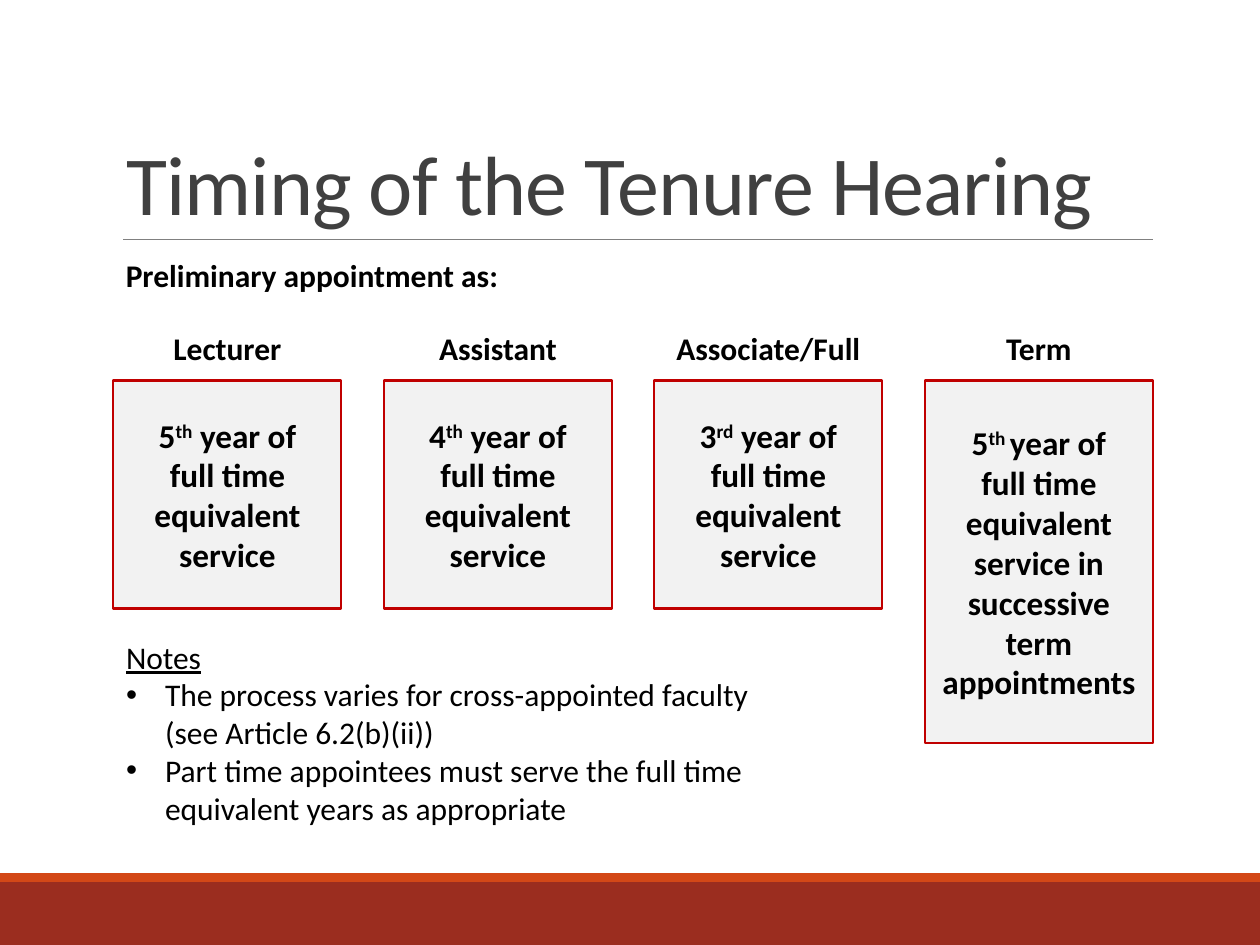
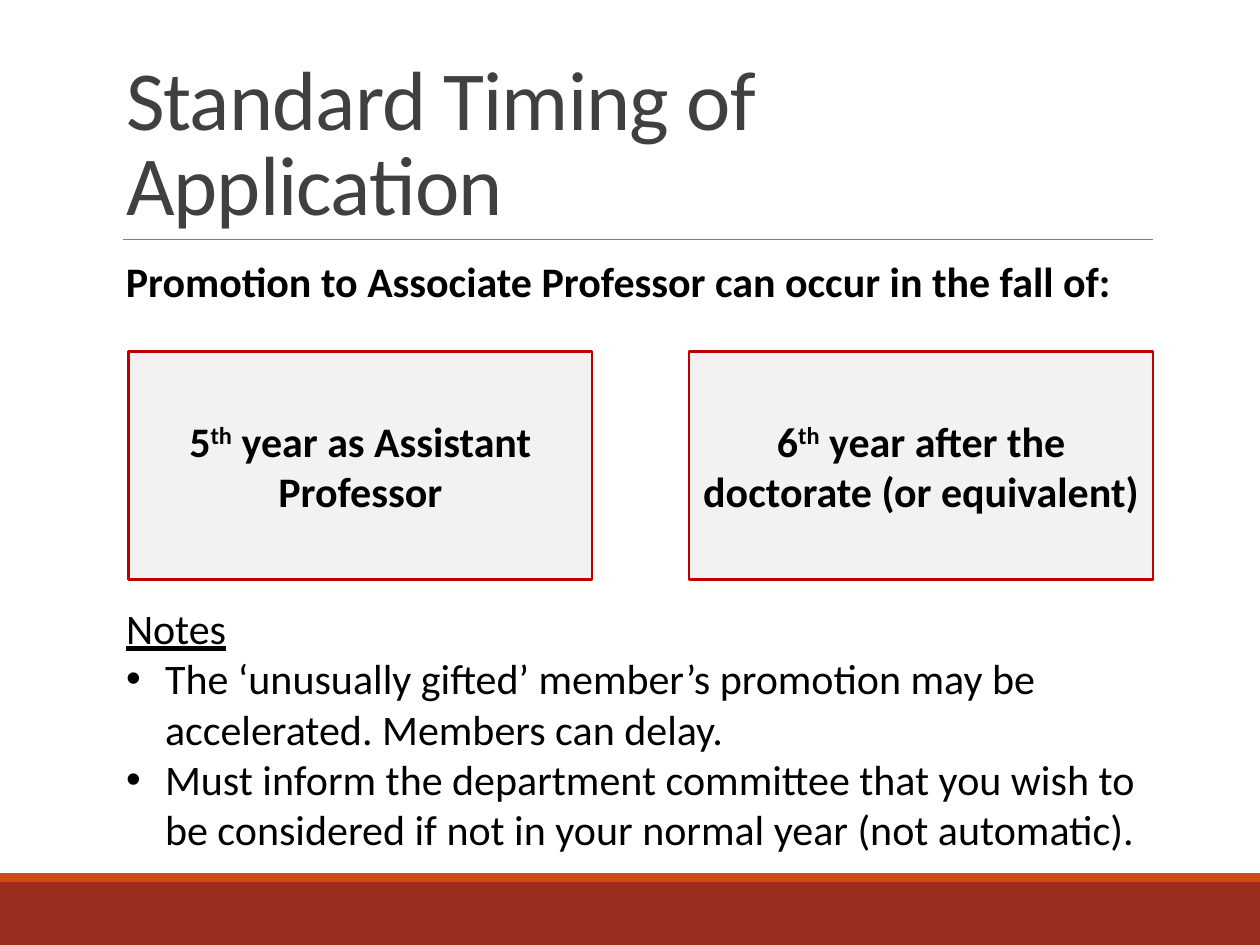
import dataclasses

import lxml.etree
import pptx
import pptx.dml.color
import pptx.enum.shapes
import pptx.enum.text
import pptx.oxml.ns
import pptx.util

ALIGN = pptx.enum.text.PP_ALIGN
ANCHOR = pptx.enum.text.MSO_ANCHOR
RECTANGLE = pptx.enum.shapes.MSO_SHAPE.RECTANGLE

# The page is a grid of 100 columns and 75 rows
SLIDE_WIDTH, SLIDE_HEIGHT = pptx.util.Inches(10), pptx.util.Inches(7.5)
COLUMN, ROW = SLIDE_WIDTH // 100, SLIDE_HEIGHT // 75
LEFT, RIGHT = 9, 91.5
FULL_WIDTH = RIGHT - LEFT
BOX_HEIGHT = 18.1


@dataclasses.dataclass(frozen=True)
class Theme:
    font: str = "Calibri"
    title: str = "404040"
    text: str = "000000"
    rule: str = "808080"
    band: str = "9B2D1F"
    stripe: str = "D34817"
    box: str = "F2F2F2"
    border: str = "C00000"
    title_size: int = 48
    large_size: int = 24
    box_size: int = 19
    small_size: int = 18


THEME = Theme()


def rgb(value):
    return pptx.dml.color.RGBColor.from_string(value)


def cells(left, top, width, height):
    """Turn grid cells into slide lengths."""
    return (round(left * COLUMN), round(top * ROW),
            round(width * COLUMN), round(height * ROW))


def spread(count, width):
    """Left edges of equal columns between the margins."""
    step = (FULL_WIDTH - width) / (count - 1)
    return [LEFT + step * index for index in range(count)]


# Text
def add_bullet(paragraph):
    properties = paragraph._p.get_or_add_pPr()
    indent = pptx.util.Inches(0.31)
    properties.set("marL", str(indent))
    properties.set("indent", str(-indent))
    for tag, name, value in (("a:buFont", "typeface", "Arial"), ("a:buChar", "char", "•")):
        element = lxml.etree.SubElement(properties, pptx.oxml.ns.qn(tag))
        element.set(name, value)


def clear_bullet(paragraph):
    properties = paragraph._p.get_or_add_pPr()
    properties.set("marL", "0")
    properties.set("indent", "0")
    lxml.etree.SubElement(properties, pptx.oxml.ns.qn("a:buNone"))


def write(paragraph, text, size, color=THEME.text, bold=False, underline=False,
          align=ALIGN.LEFT, line_spacing=1.0, tracking=None):
    """Write one paragraph; text between ^ marks is superscript."""
    paragraph.alignment = align
    paragraph.line_spacing = line_spacing
    paragraph.space_before = pptx.util.Pt(0)
    for index, part in enumerate(text.split("^")):
        run = paragraph.add_run()
        run.text = part
        font = run.font
        font.name, font.size = THEME.font, pptx.util.Pt(size)
        font.bold, font.underline = bold, underline
        font.color.rgb = rgb(color)
        properties = run._r.get_or_add_rPr()
        if index % 2:
            properties.set("baseline", "30000")
        if tracking is not None:
            properties.set("spc", str(round(tracking * 100)))


def prepare_frame(shape, anchor=ANCHOR.TOP):
    frame = shape.text_frame
    frame.word_wrap = True
    frame.auto_size = pptx.enum.text.MSO_AUTO_SIZE.NONE
    frame.vertical_anchor = anchor
    return frame


def move(shape, area):
    shape.left, shape.top, shape.width, shape.height = cells(*area)


# Elements
def add_rectangle(slide, area, fill, border=None):
    shape = slide.shapes.add_shape(RECTANGLE, *cells(*area))
    shape.shadow.inherit = False
    shape.fill.solid()
    shape.fill.fore_color.rgb = rgb(fill)
    if border:
        shape.line.color.rgb = rgb(border)
        shape.line.width = pptx.util.Pt(1.25)
    else:
        shape.line.fill.background()
    return shape


def add_label(slide, area, text, size, **style):
    shape = slide.shapes.add_textbox(*cells(*area))
    write(prepare_frame(shape).paragraphs[0], text, size, bold=True, **style)


def add_box(slide, area, lines, size):
    shape = add_rectangle(slide, area, THEME.box, THEME.border)
    frame = prepare_frame(shape, ANCHOR.MIDDLE)
    for index, line in enumerate(lines):
        paragraph = frame.add_paragraph() if index else frame.paragraphs[0]
        write(paragraph, line, size, bold=True, align=ALIGN.CENTER)


def fill_notes(slide, area, notes, size):
    body = slide.placeholders[1]
    move(body, area)
    frame = prepare_frame(body)
    heading = frame.paragraphs[0]
    clear_bullet(heading)
    write(heading, "Notes", size, underline=True)
    for note in notes:
        paragraph = frame.add_paragraph()
        add_bullet(paragraph)
        write(paragraph, note, size)


def add_slide(presentation, title):
    """Start a slide with the shared bands, rule and title."""
    slide = presentation.slides.add_slide(presentation.slide_layouts[1])
    add_rectangle(slide, (0, 70, 100, 5), THEME.band)
    add_rectangle(slide, (0, 69.3, 100, 0.7), THEME.stripe)
    start_x, y, length, _ = cells(9.8, 19, RIGHT - 9.8, 0)
    rule = slide.shapes.add_connector(
        pptx.enum.shapes.MSO_CONNECTOR.STRAIGHT, start_x, y, start_x + length, y)
    rule.line.color.rgb = rgb(THEME.rule)
    rule.line.width = pptx.util.Pt(0.5)
    lxml.etree.SubElement(rule._element.spPr, pptx.oxml.ns.qn("a:effectLst"))

    move(slide.shapes.title, (LEFT, 3.1, FULL_WIDTH, 15.9))
    frame = prepare_frame(slide.shapes.title, ANCHOR.BOTTOM)
    write(frame.paragraphs[0], title, THEME.title_size, color=THEME.title,
          line_spacing=0.85, tracking=-0.5)
    return slide


# Slides
def build_tenure_slide(presentation):
    slide = add_slide(presentation, "Timing of the Tenure Hearing")
    add_label(slide, (LEFT, 19.8, 48, 4), "Preliminary appointment as:", THEME.small_size)

    service = "full time equivalent service"
    term_service = service + " in successive term appointments"
    appointments = (
        ("Lecturer", "5^th^ year of", service, BOX_HEIGHT),
        ("Assistant", "4^th^ year of", service, BOX_HEIGHT),
        ("Associate/Full", "3^rd^ year of", service, BOX_HEIGHT),
        ("Term", "5^th ^year of", term_service, 28.8),
    )
    width = 18.1
    for left, (rank, year, basis, height) in zip(spread(len(appointments), width), appointments):
        add_label(slide, (left, 25.6, width, 4), rank, THEME.small_size, align=ALIGN.CENTER)
        add_box(slide, (left, 30.2, width, height), (year, basis), THEME.box_size)

    fill_notes(slide, (LEFT, 50.1, 54.7, 16.2), (
        "The process varies for cross-appointed faculty (see Article 6.2(b)(ii))",
        "Part time appointees must serve the full time equivalent years as appropriate",
    ), THEME.small_size)


def build_promotion_slide(presentation):
    slide = add_slide(presentation, "Standard Timing of Application")
    add_label(slide, (LEFT, 19.8, FULL_WIDTH, 5),
              "Promotion to Associate Professor can occur in the fall of:", THEME.large_size)

    width = 36.8
    milestones = (
        (10.2, "5^th^ year as Assistant Professor"),
        (RIGHT - width, "6^th^ year after the doctorate (or equivalent)"),
    )
    for left, milestone in milestones:
        add_box(slide, (left, 27.9, width, BOX_HEIGHT), (milestone,), THEME.large_size)

    fill_notes(slide, (LEFT, 47.3, FULL_WIDTH, 21.2), (
        "The ‘unusually gifted’ member’s promotion may be accelerated. Members can delay.",
        "Must inform the department committee that you wish to be considered "
        "if not in your normal year (not automatic).",
    ), THEME.large_size)


def main():
    presentation = pptx.Presentation()
    presentation.slide_width, presentation.slide_height = SLIDE_WIDTH, SLIDE_HEIGHT
    build_tenure_slide(presentation)
    build_promotion_slide(presentation)
    presentation.save("out.pptx")


if __name__ == "__main__":
    main()
